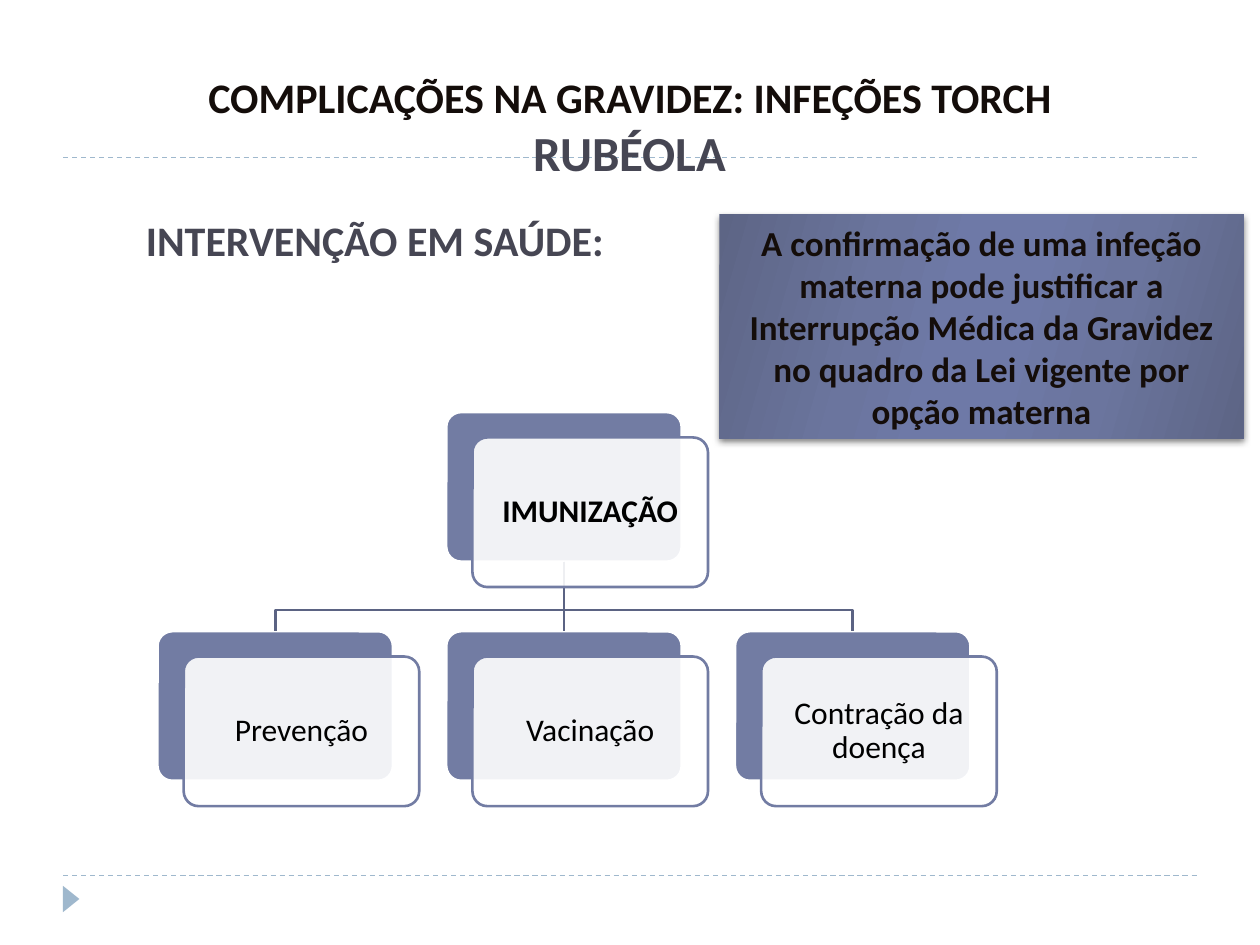
from dataclasses import dataclass

from lxml import etree
from pptx import Presentation
from pptx.dml.color import RGBColor
from pptx.enum import dml, shapes, text
from pptx.oxml import parse_xml
from pptx.oxml.ns import nsdecls, qn
from pptx.util import Pt

FONT = "Calibri"
BLUE, LINK, PALE = "727CA3", "5B6383", "9FB8CD"
INK, SLATE, BLACK, WHITE = "140D0A", "464653", "000000", "FFFFFF"
CARD_W, CARD_H = 134.6, 85.5
SHIFT_X, SHIFT_Y = 15, 14.5
COLUMNS = [90 + 165 * i for i in range(3)]
TOP_ROW, BOTTOM_ROW, BEND = 235.5, 360.7, 348.5
GRADIENT = [(0, "5D6585"), (30, "6B759E"), (45, "6E79A7"),
            (55, "6E79A7"), (73, "6B759E"), (100, "5D6585")]


@dataclass
class Line:
    text: str
    size: float
    color: str
    bold: bool = True
    align: text.PP_ALIGN = text.PP_ALIGN.CENTER
    spacing: float = 1.0


@dataclass
class Card:
    label: str
    x: float
    y: float
    bold: bool = False


def rgb(value: str) -> RGBColor:
    return RGBColor.from_string(value)


def write(tf, lines: list[Line], inset: float | None = None) -> None:
    tf.word_wrap = True
    if inset is not None:
        tf.margin_left = tf.margin_right = tf.margin_top = tf.margin_bottom = Pt(inset)
    for i, line in enumerate(lines):
        p = tf.add_paragraph() if i else tf.paragraphs[0]
        p.text = line.text
        p.alignment = line.align
        p.line_spacing = line.spacing
        p.font.name, p.font.size, p.font.bold = FONT, Pt(line.size), line.bold
        p.font.color.rgb = rgb(line.color)


def add_text(s, x: float, y: float, w: float, h: float, lines: list[Line]) -> None:
    write(s.shapes.add_textbox(Pt(x), Pt(y), Pt(w), Pt(h)).text_frame, lines)


def add_shape(s, kind, x: float, y: float, w: float, h: float, fill: str,
              line: str | None = None):
    sp = s.shapes.add_shape(kind, Pt(x), Pt(y), Pt(w), Pt(h))
    sp.shadow.inherit = False
    sp.fill.solid()
    sp.fill.fore_color.rgb = rgb(fill)
    if line:
        sp.line.color.rgb = rgb(line)
        sp.line.width = Pt(1.5)
    else:
        sp.line.fill.background()
    return sp


def add_line(s, x1: float, y1: float, x2: float, y2: float, color: str, width: float):
    c = s.shapes.add_connector(shapes.MSO_CONNECTOR.STRAIGHT, Pt(x1), Pt(y1), Pt(x2), Pt(y2))
    c.line.color.rgb = rgb(color)
    c.line.width = Pt(width)
    etree.SubElement(c._element.spPr, qn("a:effectLst"))
    return c


def add_elbow(s, x1: float, y1: float, x2: float, y2: float) -> None:
    fb = s.shapes.build_freeform(Pt(x1), Pt(y1))
    fb.add_line_segments([(Pt(x1), Pt(BEND)), (Pt(x2), Pt(BEND)), (Pt(x2), Pt(y2))], close=False)
    sp = fb.convert_to_shape()
    sp.shadow.inherit = False
    sp.fill.background()
    sp.line.color.rgb = rgb(LINK)
    sp.line.width = Pt(1.5)


def add_card_back(s, card: Card):
    sp = add_shape(s, shapes.MSO_SHAPE.ROUNDED_RECTANGLE, card.x, card.y,
                   CARD_W, CARD_H, BLUE, WHITE)
    sp.adjustments[0] = 0.1
    return sp


def add_card_front(s, card: Card) -> None:
    """Draw the translucent, labelled panel offset from the card's back."""
    sp = add_shape(s, shapes.MSO_SHAPE.ROUNDED_RECTANGLE, card.x + SHIFT_X,
                   card.y + SHIFT_Y, CARD_W, CARD_H, WHITE, BLUE)
    sp.adjustments[0] = 0.1
    color = sp._element.spPr.find(qn("a:solidFill"))[0]
    etree.SubElement(color, qn("a:alpha"), val="90000")
    tf = sp.text_frame
    tf.vertical_anchor = text.MSO_ANCHOR.MIDDLE
    write(tf, [Line(card.label, 18, BLACK, card.bold, spacing=0.9)], inset=5)


def add_notice(s, x: float, y: float, w: float, h: float, lines: list[Line]) -> None:
    """Draw the text panel with a slanted gradient and a soft shadow below."""
    sp = add_shape(s, shapes.MSO_SHAPE.RECTANGLE, x, y, w, h, BLUE)
    spPr = sp._element.spPr
    stops = "".join(f'<a:gs pos="{pos * 1000}"><a:srgbClr val="{color}"/></a:gs>'
                    for pos, color in GRADIENT)
    spPr.replace(spPr.find(qn("a:solidFill")), parse_xml(
        f'<a:gradFill {nsdecls("a")}><a:gsLst>{stops}</a:gsLst>'
        f'<a:lin ang="{16 * 60000}" scaled="0"/></a:gradFill>'))
    shadow = etree.SubElement(spPr.find(qn("a:effectLst")), qn("a:outerShdw"),
                              blurRad=str(Pt(4)), dist=str(Pt(2)), dir=str(90 * 60000))
    color = etree.SubElement(shadow, qn("a:srgbClr"), val=BLACK)
    etree.SubElement(color, qn("a:alpha"), val="50000")
    sp.text_frame.vertical_anchor = text.MSO_ANCHOR.MIDDLE
    write(sp.text_frame, lines)


def main() -> None:
    prs = Presentation()
    prs.slide_width, prs.slide_height = Pt(720), Pt(540)
    s = prs.slides.add_slide(prs.slide_layouts[6])

    for y in (500.4, 90):
        rule = add_line(s, 36, y, 684, y, PALE, 0.75)
        rule.line.dash_style = dml.MSO_LINE.DASH
    marker = add_shape(s, shapes.MSO_SHAPE.ISOSCELES_TRIANGLE, 33.1, 509, 15.1, 9.4, PALE)
    marker.rotation = 90

    add_text(s, 36.7, 37.4, 646.6, 70.6, [
        Line("COMPLICAÇÕES NA GRAVIDEZ: INFEÇÕES TORCH", 24, INK),
        Line("RUBÉOLA", 28, SLATE)])
    add_text(s, 76.3, 118.8, 283.7, 36, [
        Line("INTERVENÇÃO EM SAÚDE:", 24, SLATE, align=text.PP_ALIGN.LEFT)])

    root = Card("IMUNIZAÇÃO", COLUMNS[1], TOP_ROW, bold=True)
    labels = ["Prevenção", "Vacinação", "Contração da doença"]
    children = [Card(label, x, BOTTOM_ROW) for label, x in zip(labels, COLUMNS)]
    cards = [root, *children]
    backs = [add_card_back(s, card) for card in cards]

    middle, root_bottom = root.x + CARD_W / 2, root.y + CARD_H
    for child, back in zip(children, backs[1:]):
        if child.x == root.x:
            c = add_line(s, middle, root_bottom, middle, child.y, LINK, 1.5)
            c.begin_connect(backs[0], 2)
            c.end_connect(back, 0)
        else:
            add_elbow(s, middle, root_bottom, child.x + CARD_W / 2, child.y)
    for card in cards:
        add_card_front(s, card)

    add_notice(s, 411.1, 122.4, 299.5, 128.2, [
        Line("A confirmação de uma infeção", 20, INK),
        Line("materna pode justificar a Interrupção Médica da Gravidez "
             "no quadro da Lei vigente por opção materna", 20, INK)])
    prs.save("out.pptx")


if __name__ == "__main__":
    main()
